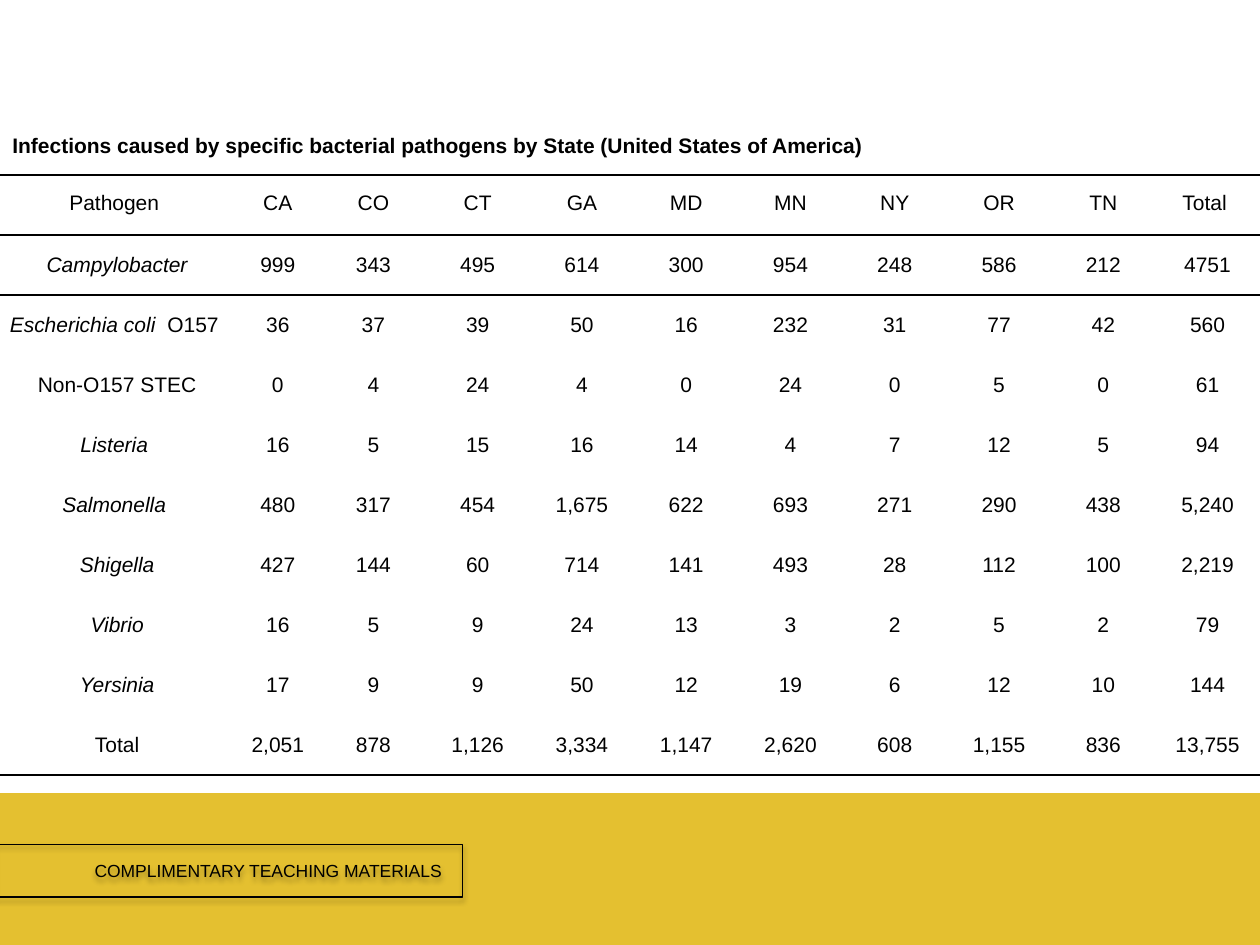
from lxml import etree
from pptx import Presentation
from pptx.dml.color import RGBColor
from pptx.enum.shapes import MSO_SHAPE
from pptx.enum.text import MSO_ANCHOR, PP_ALIGN
from pptx.oxml import parse_xml
from pptx.oxml.ns import nsdecls, qn
from pptx.util import Inches, Pt

RECT = MSO_SHAPE.RECTANGLE
MIDDLE, BOTTOM = MSO_ANCHOR.MIDDLE, MSO_ANCHOR.BOTTOM
LEFT, CENTER = PP_ALIGN.LEFT, PP_ALIGN.CENTER

WIDTH, HEIGHT = 10, 7.5
FONT = "Arial"
COLORS = {"ink": "000000", "gold": "E4C030"}
PLAIN_STYLE = "{2D5ABB26-0587-4C30-8999-92F81FD0307C}"

TITLE = ("Infections caused by specific bacterial pathogens by State "
         "(United States of America)")
LABEL = "COMPLIMENTARY TEACHING MATERIALS"

# Each row: italic part of the name, upright part, values by state and total
ROWS = [
    ("", "Pathogen ", ["CA", "CO", "CT", "GA", "MD", "MN", "NY", "OR", "TN", "Total "]),
    ("Campylobacter", "", "999 343 495 614 300 954 248 586 212 4751".split()),
    ("Escherichia coli  ", "O157 ", "36 37 39 50 16 232 31 77 42 560".split()),
    ("", "Non-O157 STEC", "0 4 24 4 0 24 0 5 0 61".split()),
    ("Listeria ", "", "16 5 15 16 14 4 7 12 5 94".split()),
    ("Salmonella ", "", "480 317 454 1,675 622 693 271 290 438 5,240".split()),
    ("Shigella", "", "427 144 60 714 141 493 28 112 100 2,219".split()),
    ("Vibrio", "", "16 5 9 24 13 3 2 5 2 79".split()),
    ("Yersinia", "", "17 9 9 50 12 19 6 12 10 144".split()),
    ("", "Total", "2,051 878 1,126 3,334 1,147 2,620 608 1,155 836 13,755".split()),
]
NAME_COL, FIRST_COL = 1.86, 0.69
STATE_COL = (WIDTH - NAME_COL - FIRST_COL) / 9
TABLE_TOP, TABLE_TALL = 1.39, 4.76


def color(name):
    return RGBColor.from_string(COLORS[name])


def style(para, size, align=LEFT, bold=False):
    para.alignment = align
    for run in para.runs:
        font = run.font
        font.name, font.size, font.bold = FONT, Pt(size), bold
        font.color.rgb = color("ink")


def add_box(slide, left, top, wide, tall, line, weight, fill=None):
    box = slide.shapes.add_shape(
        RECT, Inches(left), Inches(top), Inches(wide), Inches(tall))
    box.shadow.inherit = False
    if fill:
        box.fill.solid()
        box.fill.fore_color.rgb = color(fill)
    else:
        box.fill.background()
    box.line.color.rgb = color(line)
    box.line.width = Pt(weight)
    return box


def add_shadow(shape):
    """Cast a soft shadow straight down."""
    effects = shape.element.spPr.find(qn("a:effectLst"))
    effects.append(parse_xml(
        f'<a:outerShdw {nsdecls("a")} blurRad="{Pt(3.1)}" dist="{Pt(1.8)}" '
        f'dir="5400000" rotWithShape="0"><a:srgbClr val="{COLORS["ink"]}">'
        '<a:alpha val="35000"/></a:srgbClr></a:outerShdw>'))


def add_label(slide):
    box = add_box(slide, -0.04, 6.7, 3.71, 0.42, "ink", 0.75)
    add_shadow(box)
    frame = box.text_frame
    frame.word_wrap = True
    frame.vertical_anchor = MIDDLE
    frame.margin_left = Inches(0.79)
    frame.text = LABEL
    style(frame.paragraphs[0], 10)


def add_title(slide):
    box = slide.shapes.add_textbox(0, Inches(0.3), Inches(7.87), Inches(1.09))
    frame = box.text_frame
    frame.word_wrap = True
    frame.vertical_anchor = BOTTOM
    frame.margin_bottom = Inches(0.14)
    frame.text = TITLE
    style(frame.paragraphs[0], 12, bold=True)


def add_rules(cell, sides):
    """Draw the given cell edges, T before B."""
    props = cell._tc.get_or_add_tcPr()
    for i, side in enumerate(sides):
        props.insert(i, parse_xml(
            f'<a:ln{side} {nsdecls("a")} w="{Pt(1)}"><a:solidFill>'
            f'<a:srgbClr val="{COLORS["ink"]}"/></a:solidFill></a:ln{side}>'))


def fill_cell(cell, slant, plain, sides):
    cell.fill.background()
    cell.vertical_anchor = MIDDLE
    cell.margin_left = cell.margin_right = Inches(0.07)
    cell.margin_top = cell.margin_bottom = 0
    para = cell.text_frame.paragraphs[0]
    for text, italic in ((slant, True), (plain, False)):
        if text:
            run = para.add_run()
            run.text = text
            run.font.italic = italic
    style(para, 12, CENTER)
    add_rules(cell, sides)
    return para


def add_counts(slide):
    cols = len(ROWS[0][2]) + 1
    frame = slide.shapes.add_table(
        len(ROWS), cols, 0, Inches(TABLE_TOP), Inches(WIDTH), Inches(TABLE_TALL))
    table = frame.table
    table.first_row = table.horz_banding = False
    props = table._tbl.tblPr
    for old in props.findall(qn("a:tableStyleId")):
        props.remove(old)
    etree.SubElement(props, qn("a:tableStyleId")).text = PLAIN_STYLE

    widths = [NAME_COL, FIRST_COL] + [STATE_COL] * (cols - 2)
    for col, wide in zip(table.columns, widths):
        col.width = Inches(wide)
    rules = {0: "TB", 1: "T", len(ROWS) - 1: "B"}
    for r, (slant, plain, values) in enumerate(ROWS):
        table.rows[r].height = Inches(TABLE_TALL / len(ROWS))
        names = [(slant, plain)] + [("", value) for value in values]
        for c, parts in enumerate(names):
            para = fill_cell(table.cell(r, c), *parts, rules.get(r, ""))
            if r == 0:
                para.line_spacing = Pt(11)


def main():
    deck = Presentation()
    deck.slide_width, deck.slide_height = Inches(WIDTH), Inches(HEIGHT)
    slide = deck.slides.add_slide(deck.slide_layouts[6])
    add_box(slide, 0, 6.31, WIDTH, HEIGHT - 6.31, "gold", 2, "gold")
    add_label(slide)
    add_counts(slide)
    add_title(slide)
    deck.save("out.pptx")


if __name__ == "__main__":
    main()
